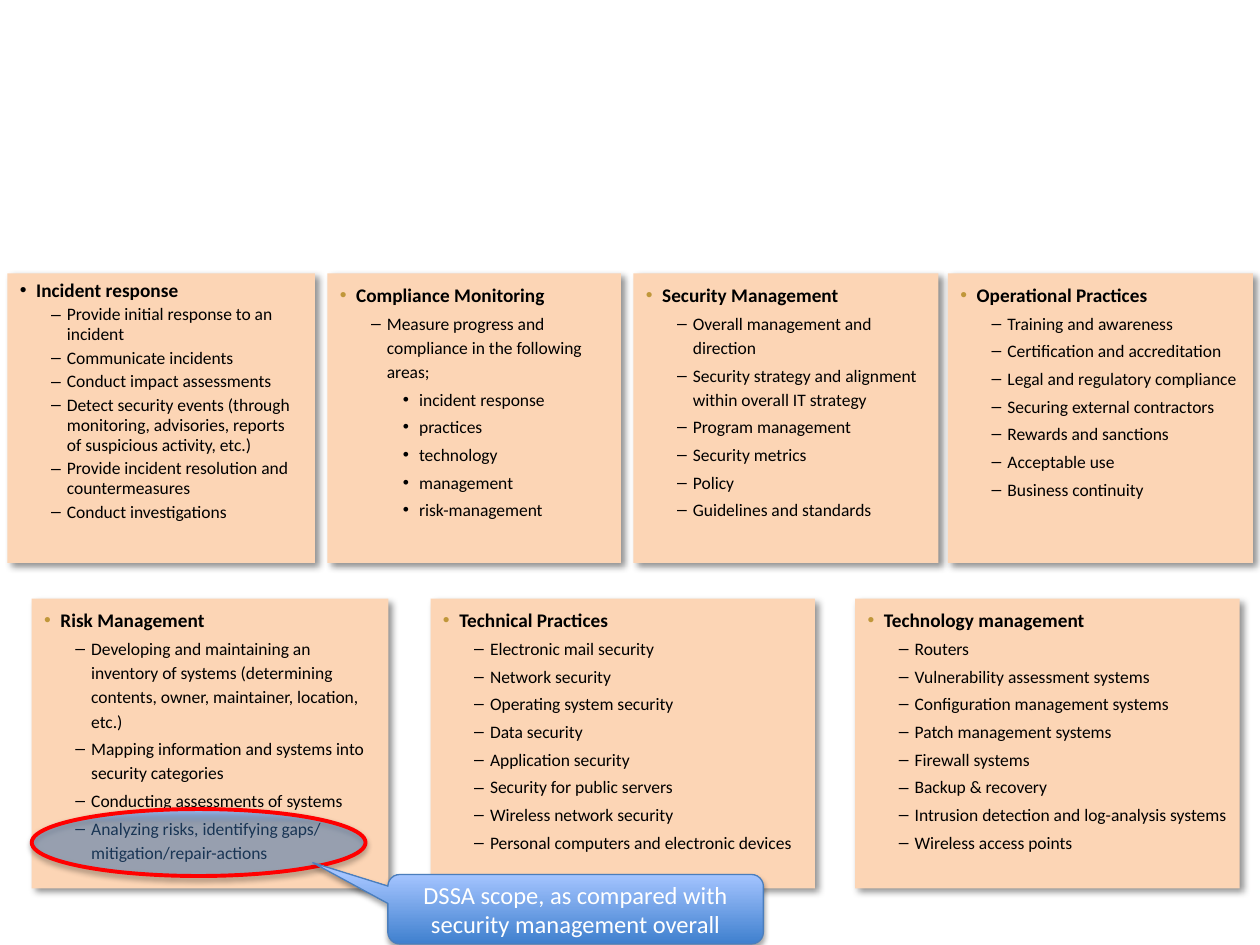
"""Build the slide that sets the DSSA scope against overall security management."""
from dataclasses import dataclass
from typing import Optional

from lxml import etree
from pptx import Presentation
from pptx import util as u
from pptx.dml.color import RGBColor
from pptx.enum import shapes, text
from pptx.oxml import ns


@dataclass(frozen=True)
class Theme:
    font: str = "Calibri"
    heading_size: float = 11
    item_size: float = 10
    callout_size: float = 14
    ink: str = "000000"
    panel: str = "FCD5B5"
    bullet: str = "C0973A"
    ring: str = "FF0000"
    callout_line: str = "4B7EBC"
    callout_ink: str = "FFFFFF"
    deep_blue: str = "3F80CE"
    light_blue: str = "A4C4FF"


@dataclass(frozen=True)
class Shadow:
    opacity: int
    blur: float
    distance: float
    angle: int


@dataclass(frozen=True)
class Level:
    left: float
    hanging: float
    bullet: str


@dataclass(frozen=True)
class Stop:
    position: int
    color: str
    opacity: int = 100


@dataclass(frozen=True)
class Panel:
    left: float
    width: float
    heading: str
    items: tuple[str, ...]
    details: tuple[str, ...] = ()
    spacing: float = 1.15
    bullet_color: Optional[str] = Theme.bullet


THEME = Theme()
PANEL_HEIGHT = 5.84
PANEL_SHADOW = Shadow(43, 4, 3, 45)
ACCENT_SHADOW = Shadow(35, 3.1, 1.8, 90)
LEVELS = (Level(0.33, 0.33, "•"), Level(0.95, 0.32, "–"), Level(1.6, 0.33, "•"))

ROWS = {
    5.51: (
        Panel(0.15, 6.2, "Incident response", (
            "Provide initial response to an incident",
            "Communicate incidents",
            "Conduct impact assessments",
            "Detect security events (through monitoring, advisories, reports of suspicious activity, etc.)",
            "Provide incident resolution and countermeasures",
            "Conduct investigations",
        ), spacing=0.95, bullet_color=None),
        Panel(6.6, 5.92, "Compliance Monitoring", (
            "Measure progress and compliance in the following areas;",
        ), details=("incident response", "practices", "technology", "management", "risk-management")),
        Panel(12.77, 6.15, "Security Management", (
            "Overall management and direction",
            "Security strategy and alignment within overall IT strategy",
            "Program management",
            "Security metrics",
            "Policy",
            "Guidelines and standards",
        )),
        Panel(19.11, 6.15, "Operational Practices", (
            "Training and awareness",
            "Certification and accreditation",
            "Legal and regulatory compliance",
            "Securing external contractors",
            "Rewards and sanctions",
            "Acceptable use",
            "Business continuity",
        )),
    ),
    12.07: (
        Panel(0.64, 7.19, "Risk Management", (
            "Developing and maintaining an inventory of systems "
            "(determining contents, owner, maintainer, location, etc.)",
            "Mapping information and systems into security categories",
            "Conducting assessments of systems",
            "Analyzing risks, identifying gaps/ mitigation/repair-actions",
        )),
        Panel(8.68, 7.75, "Technical Practices", (
            "Electronic mail security",
            "Network security",
            "Operating system security",
            "Data security",
            "Application security",
            "Security for public servers",
            "Wireless network security",
            "Personal computers and electronic devices",
        )),
        Panel(17.24, 7.75, "Technology management", (
            "Routers",
            "Vulnerability assessment systems",
            "Configuration management systems",
            "Patch management systems",
            "Firewall systems",
            "Backup & recovery",
            "Intrusion detection and log-analysis systems",
            "Wireless access points",
        )),
    ),
}


def add_element(parent, tag: str, **attributes):
    """Append a DrawingML element with the given attributes."""
    values = {name: str(value) for name, value in attributes.items()}
    return etree.SubElement(parent, ns.qn(f"a:{tag}"), values)


def add_color(parent, color: str, opacity: int = 100) -> None:
    """Append a colour, with alpha when it is not opaque."""
    node = add_element(parent, "srgbClr", val=color)
    if opacity < 100:
        add_element(node, "alpha", val=opacity * 1000)


def add_shadow(shape, shadow: Shadow) -> None:
    """Give the shape an outer shadow of its own."""
    shape.shadow.inherit = False
    effects = shape._element.spPr.find(ns.qn("a:effectLst"))
    outer = add_element(effects, "outerShdw", blurRad=u.Pt(shadow.blur), dist=u.Pt(shadow.distance),
                        dir=shadow.angle * 60000, algn="tl", rotWithShape=0)
    add_color(outer, THEME.ink, shadow.opacity)


def fill_gradient(shape, *stops: Stop) -> None:
    """Fill the shape with a gradient that rises from bottom to top."""
    shape.fill.gradient()
    gradient = shape._element.spPr.find(ns.qn("a:gradFill"))
    for child in list(gradient):
        gradient.remove(child)
    stop_list = add_element(gradient, "gsLst")
    for stop in stops:
        add_color(add_element(stop_list, "gs", pos=stop.position * 1000), stop.color, stop.opacity)
    add_element(gradient, "lin", ang=270 * 60000, scaled=0)


def outline(shape, color: str, width: float) -> None:
    """Set the colour and width of the shape's line."""
    shape.line.color.rgb = RGBColor.from_string(color)
    shape.line.width = u.Pt(width)


def format_font(para, size: float, color: str, bold: bool = False) -> None:
    """Format every run of the paragraph alike."""
    for span in para.runs:
        span.font.name, span.font.size, span.font.bold = THEME.font, u.Pt(size), bold
        span.font.color.rgb = RGBColor.from_string(color)


def format_bullet(para, depth: int, panel: Panel) -> None:
    """Set spacing, hanging indent and bullet for an outline depth."""
    level = LEVELS[depth]
    para.level, para.line_spacing, para.alignment = depth, panel.spacing, text.PP_ALIGN.LEFT
    properties = para._p.get_or_add_pPr()
    properties.set("marL", str(u.Cm(level.left)))
    properties.set("indent", str(-u.Cm(level.hanging)))
    add_element(add_element(properties, "spcBef"), "spcPct", val=20000)
    if depth == 0 and panel.bullet_color:
        add_color(add_element(properties, "buClr"), panel.bullet_color)
    add_element(properties, "buFont", typeface="Arial")
    add_element(properties, "buChar", char=level.bullet)


def add_panel(page, top: float, panel: Panel) -> None:
    """Draw one topic panel with its bulleted outline."""
    box = page.shapes.add_shape(shapes.MSO_SHAPE.RECTANGLE, u.Cm(panel.left), u.Cm(top),
                                u.Cm(panel.width), u.Cm(PANEL_HEIGHT))
    box.fill.solid()
    box.fill.fore_color.rgb = RGBColor.from_string(THEME.panel)
    box.line.fill.background()
    add_shadow(box, PANEL_SHADOW)
    frame = box.text_frame
    frame.vertical_anchor = text.MSO_ANCHOR.TOP
    frame.text = "\n".join((panel.heading, *panel.items, *panel.details))
    depths = [0] + [1] * len(panel.items) + [2] * len(panel.details)
    for para, depth in zip(frame.paragraphs, depths):
        format_bullet(para, depth, panel)
        format_font(para, THEME.item_size if depth else THEME.heading_size, THEME.ink, depth == 0)


def add_scope_ring(page) -> None:
    """Ring the part of risk management that is in scope."""
    ring = page.shapes.add_shape(shapes.MSO_SHAPE.OVAL, u.Cm(0.64), u.Cm(16.31), u.Cm(6.73), u.Cm(1.35))
    fill_gradient(ring, Stop(79, THEME.deep_blue, 41), Stop(100, THEME.light_blue))
    outline(ring, THEME.ring, 2.25)
    add_shadow(ring, ACCENT_SHADOW)


def add_scope_callout(page) -> None:
    """Draw the callout that explains the ring."""
    callout = page.shapes.add_shape(shapes.MSO_SHAPE.ROUNDED_RECTANGULAR_CALLOUT,
                                    u.Cm(7.82), u.Cm(17.63), u.Cm(7.57), u.Cm(1.4))
    for index, value in enumerate((-0.7, -0.67, 0.17)):
        callout.adjustments[index] = value
    fill_gradient(callout, Stop(0, THEME.deep_blue), Stop(100, THEME.light_blue))
    outline(callout, THEME.callout_line, 0.75)
    add_shadow(callout, ACCENT_SHADOW)
    frame = callout.text_frame
    frame.text = "DSSA scope, as compared with security management overall"
    frame.vertical_anchor = text.MSO_ANCHOR.MIDDLE
    para = frame.paragraphs[0]
    para.alignment = text.PP_ALIGN.CENTER
    format_font(para, THEME.callout_size, THEME.callout_ink)


def main() -> None:
    """Build and save the deck."""
    deck = Presentation()
    deck.slide_width, deck.slide_height = u.Cm(25.4), u.Cm(19.05)
    page = deck.slides.add_slide(deck.slide_layouts[6])
    for top, panels in ROWS.items():
        for panel in panels:
            add_panel(page, top, panel)
    add_scope_ring(page)
    add_scope_callout(page)
    deck.save("out.pptx")


if __name__ == "__main__":
    main()
